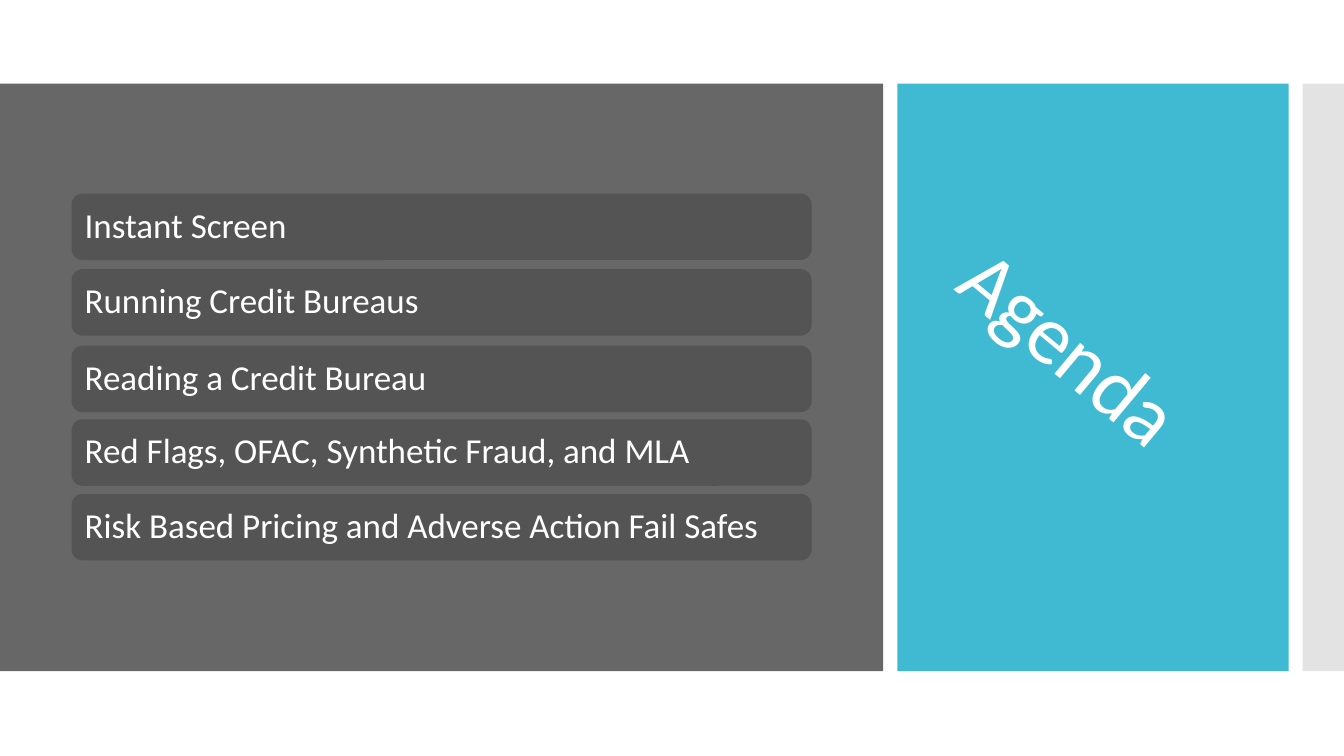
from pptx import Presentation
from pptx.dml.color import RGBColor
from pptx.enum.shapes import MSO_SHAPE as Shape
from pptx.enum.text import MSO_ANCHOR as Anchor, MSO_AUTO_SIZE as AutoSize, PP_ALIGN as Align
from pptx.util import Inches, Pt

COLORS = {"page": "FFFFFF", "panel": "676767", "accent": "40BAD2",
          "strip": "E3E3E3", "item": "545454", "text": "FFFFFF"}
FONT = "Calibri"
TITLE = "Agenda"
# Agenda item and the top of its bar, in inches
AGENDA = [
    ("Instant Screen", 1.92),
    ("Running Credit Bureaus", 2.67),
    ("Reading a Credit Bureau", 3.43),
    ("Red Flags, OFAC, Synthetic Fraud, and MLA", 4.16),
    ("Risk Based Pricing and Adverse Action Fail Safes", 4.9),
]
# Left, width and colour of each full-height band
BANDS = [(0, 8.76, "panel"), (8.9, 3.88, "accent"), (12.92, 0.41, "strip")]
BAND_TOP, BAND_HEIGHT = 0.83, 5.83
BAR_LEFT, BAR_WIDTH, BAR_HEIGHT = 0.71, 7.34, 0.66


def rgb(name):
    return RGBColor.from_string(COLORS[name])


def add_block(slide, preset, left, top, width, height, color):
    block = slide.shapes.add_shape(
        preset, Inches(left), Inches(top), Inches(width), Inches(height))
    block.shadow.inherit = False
    block.fill.solid()
    block.fill.fore_color.rgb = rgb(color)
    block.line.fill.background()
    return block


def write(shape, text, size):
    """Set one left-aligned, vertically centred line of text."""
    frame = shape.text_frame
    frame.text = text
    frame.word_wrap = True
    frame.auto_size = AutoSize.NONE
    frame.vertical_anchor = Anchor.MIDDLE
    paragraph = frame.paragraphs[0]
    paragraph.alignment = Align.LEFT
    paragraph.line_spacing = 0.9
    font = paragraph.runs[0].font
    font.name = FONT
    font.size = Pt(size)
    font.color.rgb = rgb("text")


def place_title(title):
    title.left, title.top = Inches(9.18), Inches(3.17)
    title.width, title.height = Inches(3.22), Inches(0.92)
    title.rotation = 39.8
    write(title, TITLE, 60)
    run = title.text_frame.paragraphs[0].runs[0]
    run.font._element.set("spc", "-60")
    # Bring the title in front of the bands
    title.element.getparent().append(title.element)


def main():
    deck = Presentation()
    deck.slide_width, deck.slide_height = Inches(13.33), Inches(7.5)
    slide = deck.slides.add_slide(deck.slide_layouts[5])
    slide.background.fill.solid()
    slide.background.fill.fore_color.rgb = rgb("page")

    for left, width, color in BANDS:
        add_block(slide, Shape.RECTANGLE, left, BAND_TOP, width, BAND_HEIGHT, color)
    place_title(slide.shapes.title)

    for item, top in AGENDA:
        bar = add_block(slide, Shape.ROUNDED_RECTANGLE,
                        BAR_LEFT, top, BAR_WIDTH, BAR_HEIGHT, "item")
        write(bar, item, 25)
        bar.text_frame.margin_left = bar.text_frame.margin_right = Inches(0.1)

    deck.save("out.pptx")


if __name__ == "__main__":
    main()
